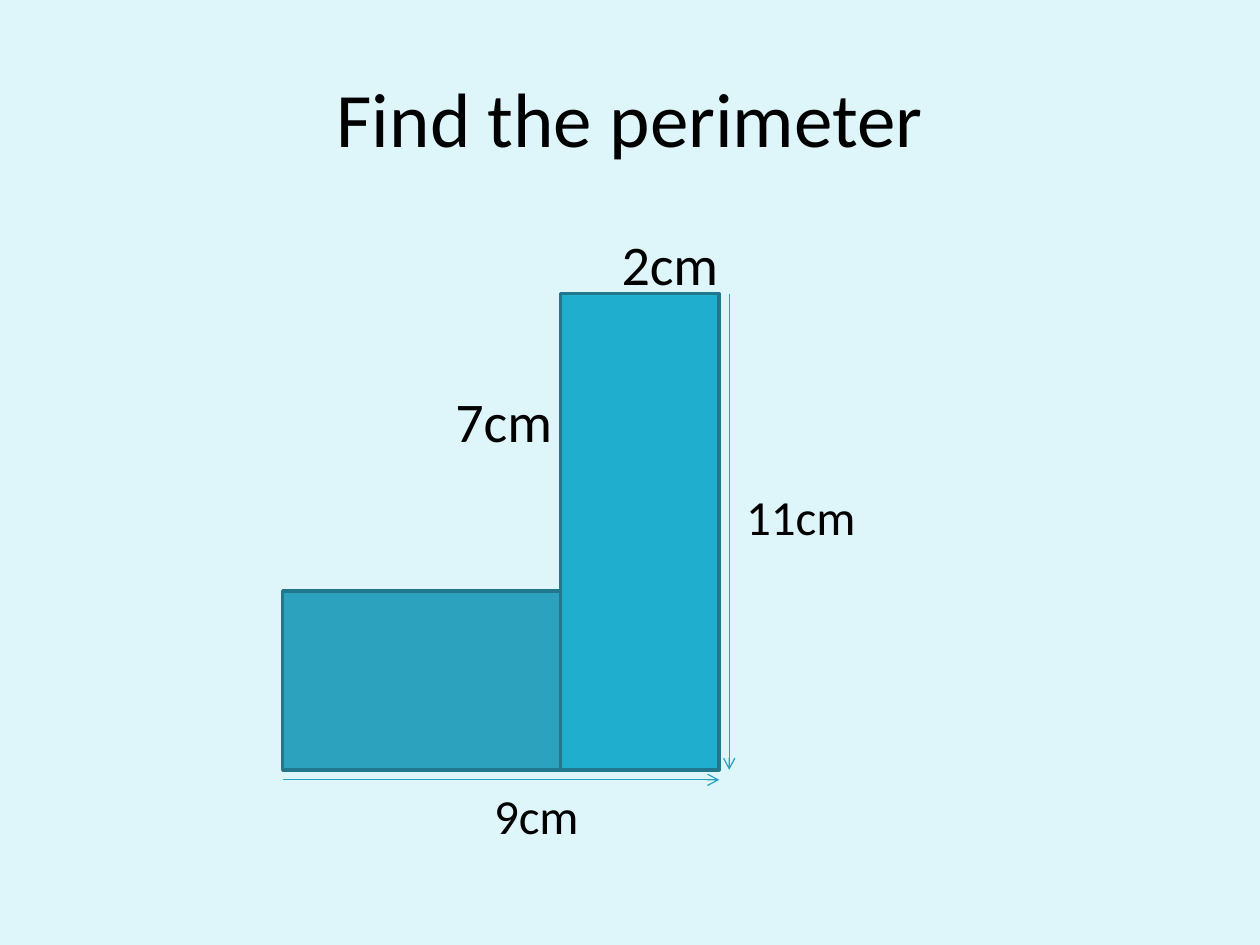
from lxml.etree import SubElement
from pptx import Presentation
from pptx.dml.color import RGBColor
from pptx.enum.shapes import MSO_CONNECTOR, MSO_SHAPE
from pptx.enum.text import MSO_ANCHOR, PP_ALIGN
from pptx.oxml.ns import qn
from pptx.util import Cm, Pt

BACKGROUND = RGBColor(0xDE, 0xF5, 0xFA)
TOWER_FILL = RGBColor(0x1F, 0xAE, 0xCD)
STEP_FILL = RGBColor(0x2D, 0xA2, 0xBF)
OUTLINE = RGBColor(0x21, 0x78, 0x8D)
ARROW = RGBColor(0x28, 0xA1, 0xBE)
BLACK = RGBColor(0, 0, 0)


def add_text(page, text, left, top, width, height, size,
             align=PP_ALIGN.LEFT, anchor=MSO_ANCHOR.TOP):
    box = page.shapes.add_textbox(Cm(left), Cm(top), Cm(width), Cm(height))
    frame = box.text_frame
    frame.word_wrap = True
    frame.vertical_anchor = anchor
    para = frame.paragraphs[0]
    para.alignment = align
    span = para.add_run()
    span.text = text
    for name, value in {"name": "Calibri", "size": Pt(size)}.items():
        setattr(span.font, name, value)
    span.font.color.rgb = BLACK


def add_block(page, left, top, width, height, fill):
    block = page.shapes.add_shape(
        MSO_SHAPE.RECTANGLE, Cm(left), Cm(top), Cm(width), Cm(height))
    block.shadow.inherit = False
    block.fill.solid()
    block.fill.fore_color.rgb = fill
    block.line.color.rgb = OUTLINE
    block.line.width = Pt(2)


def add_arrow(page, *ends):
    arrow = page.shapes.add_connector(
        MSO_CONNECTOR.STRAIGHT, *(Cm(value) for value in ends))
    arrow.line.color.rgb = ARROW
    arrow.line.width = Pt(0.75)
    SubElement(arrow.line._get_or_add_ln(), qn("a:tailEnd"), type="arrow")
    SubElement(arrow._element.spPr, qn("a:effectLst"))


def add_title(page, left, top, width, height):
    add_text(page, "Find the perimeter", left, top, width, height, 44,
             PP_ALIGN.CENTER, MSO_ANCHOR.MIDDLE)


def add_figure(page, left, top, width, height):
    """Draw the L shape in the box, with its measurements around it."""
    right, bottom = left + width, top + height
    tower_width, step_height, gap = 3.2, 3.61, 0.2
    add_block(page, right - tower_width, top, tower_width, height, TOWER_FILL)
    add_block(page, left, bottom - step_height,
              width - tower_width, step_height, STEP_FILL)
    add_arrow(page, right + gap, top, right + gap, bottom)
    add_arrow(page, left, bottom + gap, right, bottom + gap)
    labels = [
        ("2cm", 6.58, -1.42, 32),
        ("7cm", 3.23, 1.75, 32),
        ("11cm", 9.09, 3.76, 28),
        ("9cm", 4.01, height + gap, 28),
    ]
    for text, across, down, size in labels:
        add_text(page, text, left + across, top + down, 2.8, 1.45, size)


def main():
    deck = Presentation()
    deck.slide_width, deck.slide_height = Cm(25.4), Cm(19.05)
    page = deck.slides.add_slide(deck.slide_layouts[6])
    page.background.fill.solid()
    page.background.fill.fore_color.rgb = BACKGROUND
    add_title(page, 1.27, 0.76, 22.86, 3.18)
    add_figure(page, 5.7, 5.92, 8.8, 9.6)
    deck.save("out.pptx")


if __name__ == "__main__":
    main()
